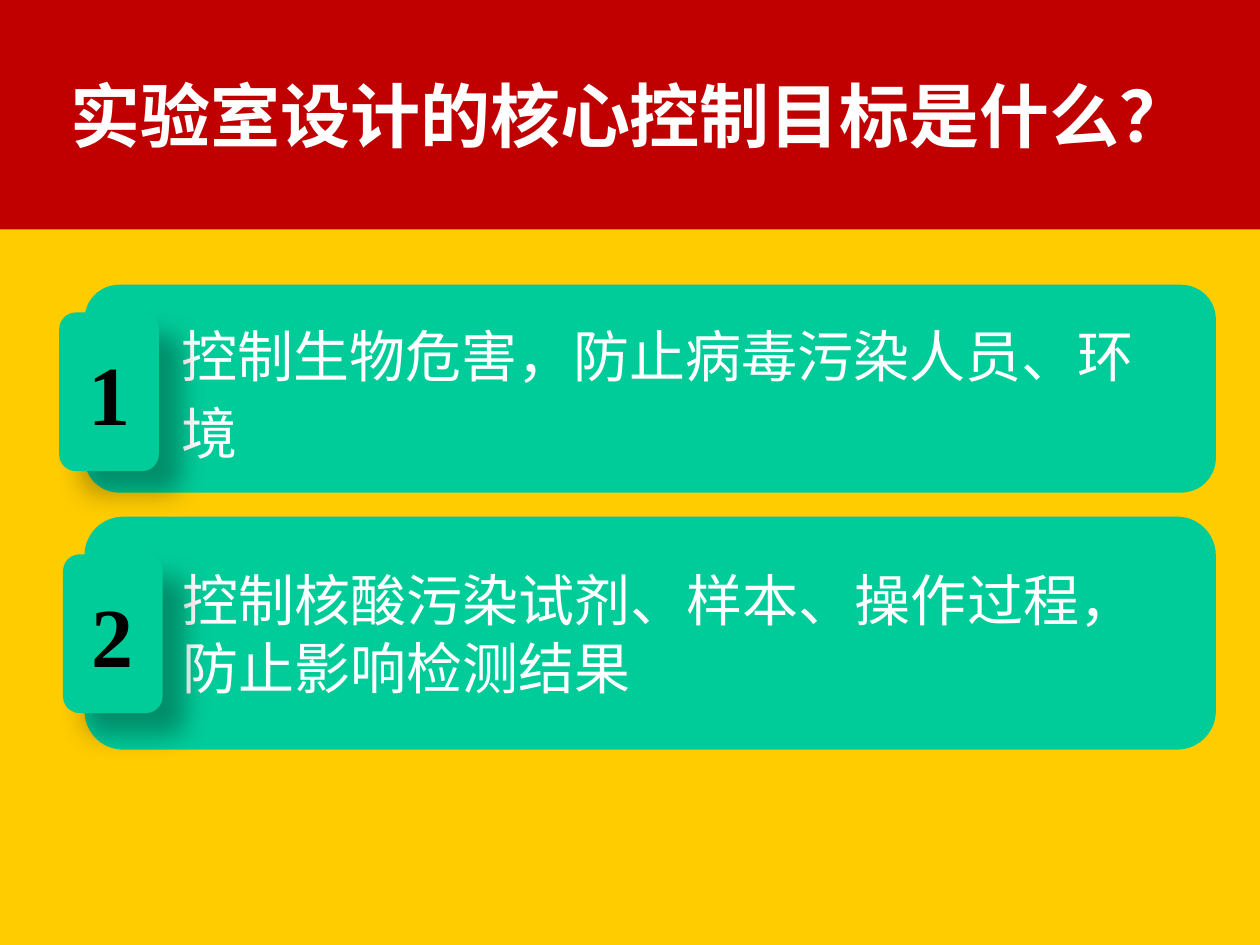
from lxml import etree
from pptx import Presentation
from pptx.dml.color import RGBColor
from pptx.enum.shapes import MSO_SHAPE
from pptx.enum.text import MSO_ANCHOR, PP_ALIGN
from pptx.oxml.ns import qn
from pptx.util import Inches, Pt

ROUNDED = MSO_SHAPE.ROUNDED_RECTANGLE
MIDDLE = MSO_ANCHOR.MIDDLE
LEFT, CENTER = PP_ALIGN.LEFT, PP_ALIGN.CENTER

RED = RGBColor(0xC0, 0x00, 0x00)
YELLOW = RGBColor(0xFF, 0xCC, 0x00)
GREEN = RGBColor(0x00, 0xCC, 0x99)
WHITE = RGBColor(0xFF, 0xFF, 0xFF)
BLACK = RGBColor(0x00, 0x00, 0x00)
CHINESE, LATIN = "Noto Sans CJK SC", "Times New Roman"


def add_line(paragraph, text, size, font, color, bold=False, align=LEFT):
    paragraph.alignment = align
    run = paragraph.add_run()
    run.text = text
    run.font.size = Pt(size)
    run.font.name = font
    run.font.bold = bold
    run.font.color.rgb = color
    east_asian = etree.SubElement(run._r.get_or_add_rPr(), qn("a:ea"))
    east_asian.set("typeface", CHINESE)


def add_rounded(left, top, width, height):
    shape = slide.shapes.add_shape(
        ROUNDED, Inches(left), Inches(top), Inches(width), Inches(height))
    shape.shadow.inherit = False
    shape.fill.solid()
    shape.fill.fore_color.rgb = GREEN
    shape.line.fill.background()
    shape.text_frame.word_wrap = True
    shape.text_frame.vertical_anchor = MIDDLE
    return shape


prs = Presentation()
prs.slide_width, prs.slide_height = Inches(10), Inches(7.5)
slide = prs.slides.add_slide(prs.slide_layouts[5])
slide.background.fill.solid()
slide.background.fill.fore_color.rgb = YELLOW

# Title band
title = slide.shapes.title
title.left, title.top = 0, 0
title.width, title.height = prs.slide_width, Inches(1.82)
title.fill.solid()
title.fill.fore_color.rgb = RED
title.text_frame.vertical_anchor = MIDDLE
add_line(title.text_frame.paragraphs[0], "实验室设计的核心控制目标是什么？",
         40, CHINESE, WHITE, bold=True, align=CENTER)

# Goals: card top, card height, badge left, badge top, line spacing, lines
goals = [
    (2.26, 1.65, 0.47, 2.48, 1.14,
     ["控制生物危害，防止病毒污染人员、环", "境"]),
    (4.1, 1.85, 0.5, 4.4, 1.0,
     ["控制核酸污染试剂、样本、操作过程，", "防止影响检测结果"]),
]
for number, (top, height, badge_left, badge_top, spacing, lines) in enumerate(goals, 1):
    # Card with its text clear of the badge
    card = add_rounded(0.67, top, 8.98, height)
    card.text_frame.margin_left = Inches(0.69)
    for index, line in enumerate(lines):
        paragraph = (card.text_frame.add_paragraph() if index
                     else card.text_frame.paragraphs[0])
        paragraph.line_spacing = spacing
        add_line(paragraph, line, 32, CHINESE, WHITE)

    # Numbered badge with a soft shadow to the lower right
    badge = add_rounded(badge_left, badge_top, 0.79, 1.26)
    add_line(badge.text_frame.paragraphs[0], str(number),
             48, LATIN, BLACK, bold=True, align=CENTER)
    effects = badge._element.spPr.find(qn("a:effectLst"))
    shadow = etree.SubElement(
        effects, qn("a:outerShdw"), blurRad=str(Pt(15)), dist=str(Pt(18)),
        dir=str(45 * 60000), algn="tl", rotWithShape="0")
    shade = etree.SubElement(shadow, qn("a:srgbClr"), val=str(BLACK))
    etree.SubElement(shade, qn("a:alpha"), val="30000")

prs.save("out.pptx")
